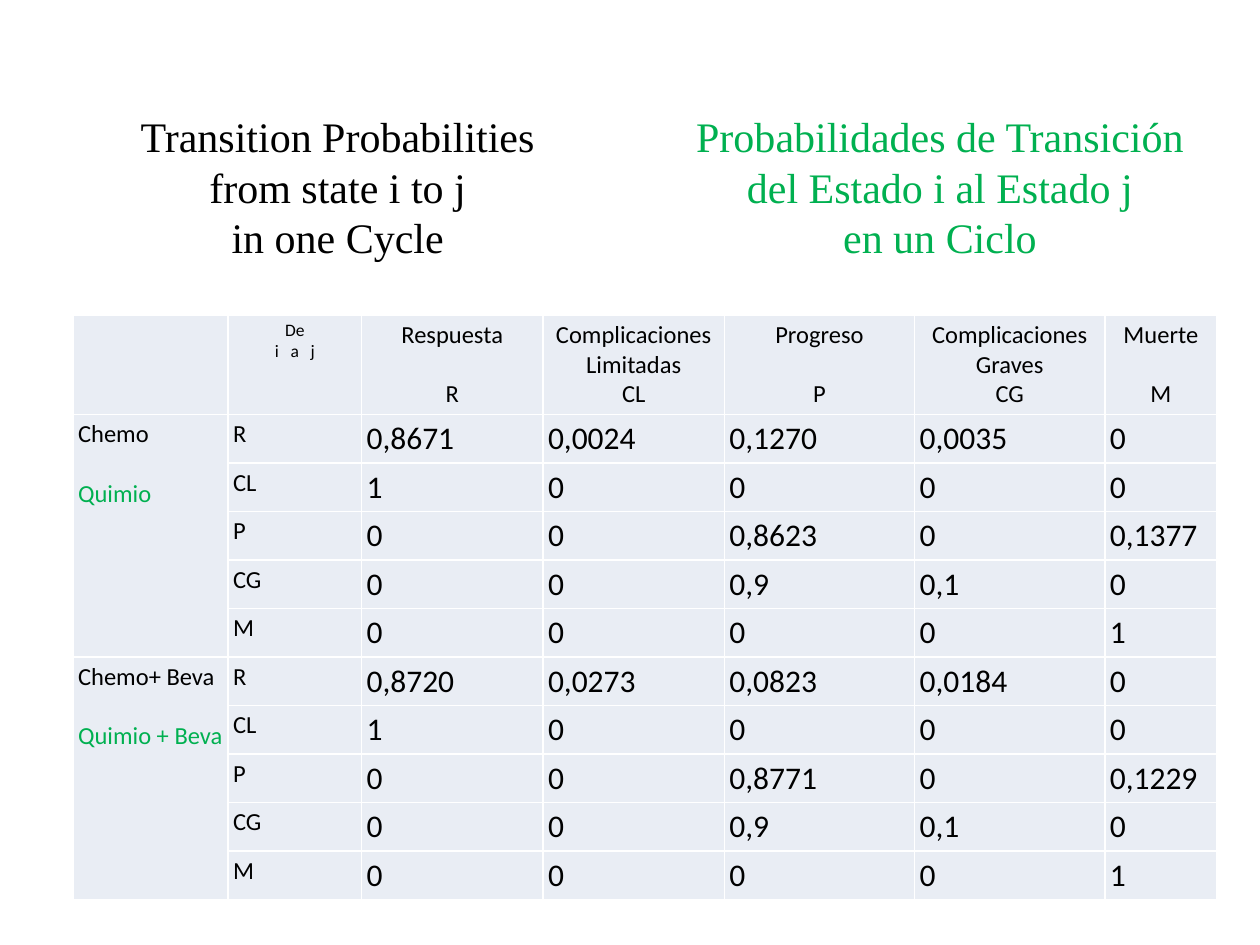
from dataclasses import dataclass

from lxml import etree
from pptx import Presentation
from pptx.dml.color import RGBColor
from pptx.enum.text import MSO_ANCHOR, MSO_AUTO_SIZE, PP_ALIGN
from pptx.oxml.ns import qn
from pptx.util import Inches, Pt

LEFT, CENTER = PP_ALIGN.LEFT, PP_ALIGN.CENTER
TOP = MSO_ANCHOR.TOP
NO_AUTOFIT = MSO_AUTO_SIZE.NONE
TITLE_ONLY = 5


@dataclass(frozen=True)
class Theme:
    black: str = "000000"
    green: str = "00B050"
    cell: str = "E9EDF4"
    border: str = "FFFFFF"
    heading_font: str = "Times New Roman"
    table_font: str = "Calibri"
    heading: int = 24
    value: int = 18
    label: int = 14
    corner: int = 10
    blank_line: int = 17
    cell_margin: float = 0.04


HEADINGS = {
    "en": ["Transition Probabilities", "from state i to j", "in one Cycle"],
    "es": ["Probabilidades de Transición", "del Estado i al Estado j",
           "en un Ciclo"],
}
COL_WIDTHS = [1.23, 1.06, 1.44, 1.44, 1.51, 1.51, 0.89]
HEADER_HEIGHT, ROW_HEIGHT = 0.78, 0.38

# Name, code, and whether a line is left free between them
STATES = [
    ("Respuesta", "R", True),
    ("Complicaciones Limitadas", "CL", False),
    ("Progreso", "P", True),
    ("Complicaciones Graves", "CG", False),
    ("Muerte", "M", True),
]
TREATMENTS = [
    ("Chemo", "Quimio", [
        ["0,8671", "0,0024", "0,1270", "0,0035", "0"],
        ["1", "0", "0", "0", "0"],
        ["0", "0", "0,8623", "0", "0,1377"],
        ["0", "0", "0,9", "0,1", "0"],
        ["0", "0", "0", "0", "1"],
    ]),
    ("Chemo+ Beva", "Quimio + Beva", [
        ["0,8720", "0,0273", "0,0823", "0,0184", "0"],
        ["1", "0", "0", "0", "0"],
        ["0", "0", "0,8771", "0", "0,1229"],
        ["0", "0", "0,9", "0,1", "0"],
        ["0", "0", "0", "0", "1"],
    ]),
]


class SlideBuilder:
    def __init__(self, prs, theme):
        self.theme = theme
        self.s = prs.slides.add_slide(prs.slide_layouts[TITLE_ONLY])

    def add_lines(self, tf, lines, size, font, color=None, align=LEFT):
        """Add one paragraph per line and return the paragraphs."""
        for i, line in enumerate(lines):
            p = tf.paragraphs[0] if i == 0 else tf.add_paragraph()
            p.add_run().text = line
            p.alignment = align
            p.font.size, p.font.name = Pt(size), font
            p.font.color.rgb = RGBColor.from_string(color or self.theme.black)
        return tf.paragraphs

    def heading(self, sp, lines, color):
        t, tf = self.theme, sp.text_frame
        tf.word_wrap, tf.auto_size = True, NO_AUTOFIT
        tf.vertical_anchor = TOP
        self.add_lines(tf, lines, t.heading, t.heading_font, color, CENTER)

    def title(self, lines, x, y, w, h):
        sp = self.s.shapes.title
        sp.left, sp.top, sp.width, sp.height = map(Inches, (x, y, w, h))
        self.heading(sp, lines, self.theme.black)

    def translation(self, lines, x, y, w, h):
        sp = self.s.shapes.add_textbox(*map(Inches, (x, y, w, h)))
        self.heading(sp, lines, self.theme.green)

    def style_cell(self, cell):
        t = self.theme
        cell.margin_left = cell.margin_right = Inches(t.cell_margin)
        cell.margin_top = cell.margin_bottom = Inches(t.cell_margin)
        tc_pr = cell._tc.get_or_add_tcPr()
        for side in ("lnL", "lnR", "lnT", "lnB"):
            ln = etree.SubElement(tc_pr, qn(f"a:{side}"), w=str(Pt(1)))
            fill = etree.SubElement(ln, qn("a:solidFill"))
            etree.SubElement(fill, qn("a:srgbClr"), val=t.border)
        cell.fill.solid()
        cell.fill.fore_color.rgb = RGBColor.from_string(t.cell)

    def cell_text(self, cell, lines, size, align=LEFT):
        return self.add_lines(cell.text_frame, lines, size,
                              self.theme.table_font, align=align)

    def table(self, x, y):
        n_rows = 1 + len(TREATMENTS) * len(STATES)
        height = HEADER_HEIGHT + ROW_HEIGHT * (n_rows - 1)
        table = self.s.shapes.add_table(
            n_rows, len(COL_WIDTHS), Inches(x), Inches(y),
            Inches(sum(COL_WIDTHS)), Inches(height)).table
        table.first_row = table.horz_banding = False
        for col, width in zip(table.columns, COL_WIDTHS):
            col.width = Inches(width)
        for i, row in enumerate(table.rows):
            row.height = Inches(ROW_HEIGHT if i else HEADER_HEIGHT)
        for cell in table.iter_cells():
            self.style_cell(cell)
        self.table_header(table)
        for i, treatment in enumerate(TREATMENTS):
            self.treatment_rows(table, 1 + i * len(STATES), *treatment)

    def table_header(self, table):
        t = self.theme
        corner = self.cell_text(table.cell(0, 1), ["De", "i a j"], t.corner,
                                CENTER)
        # Letter spacing sets the three letters apart
        corner[1].runs[0].font._element.set("spc", "225")
        for col, (name, code, gap) in enumerate(STATES, 2):
            ps = self.cell_text(table.cell(0, col), [name, code], t.label,
                                CENTER)
            if gap:
                ps[1].space_before = Pt(t.blank_line)

    def treatment_rows(self, table, top, english, spanish, matrix):
        t = self.theme
        group = table.cell(top, 0)
        group.merge(table.cell(top + len(STATES) - 1, 0))
        ps = self.cell_text(group, [english, spanish], t.label)
        ps[1].space_before = Pt(t.blank_line)
        ps[1].font.color.rgb = RGBColor.from_string(t.green)
        for row, ((_, code, _), values) in enumerate(zip(STATES, matrix), top):
            self.cell_text(table.cell(row, 1), [code], t.label)
            for col, value in enumerate(values, 2):
                self.cell_text(table.cell(row, col), [value], t.value)


def main():
    prs = Presentation()
    prs.slide_width, prs.slide_height = Inches(10), Inches(7.5)
    slide = SlideBuilder(prs, Theme())
    slide.table(0.58, 2.5)
    slide.translation(HEADINGS["es"], 5.25, 0.83, 4.42, 1.72)
    slide.title(HEADINGS["en"], 0.43, 0.83, 4.5, 1.31)
    prs.save("out.pptx")


if __name__ == "__main__":
    main()
